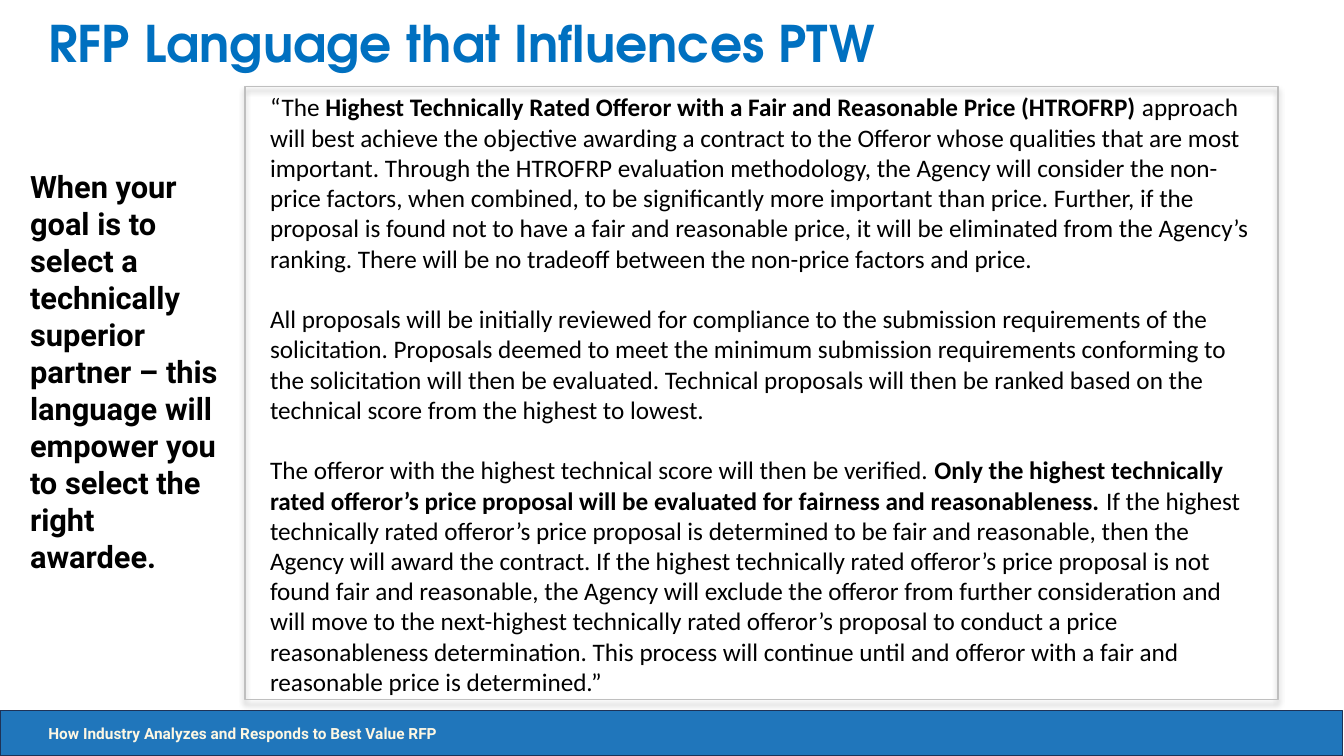
import pptx
import pptx.dml.color
import pptx.enum.shapes
import pptx.enum.text
import pptx.oxml
import pptx.oxml.ns
import pptx.util

Pt = pptx.util.Pt

TITLE = "RFP Language that Influences PTW"
GOAL = ("When your goal is to select a technically superior partner – this language "
        "will empower you to select the right awardee.")
FOOTER = "How Industry Analyzes and Responds to Best Value RFP"
QUOTE = [
    [("“The ", False),
     ("Highest Technically Rated Offeror with a Fair and Reasonable Price (HTROFRP) ", True),
     ("approach will best achieve the objective awarding a contract to the Offeror whose "
      "qualities that are most important. Through the HTROFRP evaluation methodology, the "
      "Agency will consider the non-price factors, when combined, to be significantly more "
      "important than price. Further, if the proposal is found not to have a fair and "
      "reasonable price, it will be eliminated from the Agency’s ranking. There will be no "
      "tradeoff between the non-price factors and price.", False)],
    [("All proposals will be initially reviewed for compliance to the submission requirements "
      "of the solicitation. Proposals deemed to meet the minimum submission requirements "
      "conforming to the solicitation will then be evaluated. Technical proposals will then be "
      "ranked based on the technical score from the highest to lowest.", False)],
    [("The offeror with the highest technical score will then be verified. ", False),
     ("Only the highest technically rated offeror’s price proposal will be evaluated for "
      "fairness and reasonableness. ", True),
     ("If the highest technically rated offeror’s price proposal is determined to be fair and "
      "reasonable, then the Agency will award the contract. If the highest technically rated "
      "offeror’s price proposal is not found fair and reasonable, the Agency will exclude the "
      "offeror from further consideration and will move to the next-highest technically rated "
      "offeror’s proposal to conduct a price reasonableness determination. This process will "
      "continue until and offeror with a fair and reasonable price is determined.”", False)],
]


def rgb(value):
    """Turn a hex string into a colour."""
    return pptx.dml.color.RGBColor.from_string(value)


def add_run(p, text, font="Calibri", size=18, color="000000", bold=False):
    """Append formatted text to a paragraph."""
    r = p.add_run()
    r.text = text
    r.font.name = font
    r.font.size = Pt(size)
    r.font.bold = bold
    r.font.color.rgb = rgb(color)


def place(sp, left, top, width, height):
    """Position a shape, with lengths in points."""
    sp.left, sp.top, sp.width, sp.height = Pt(left), Pt(top), Pt(width), Pt(height)


def set_title(slide, text, box, **fmt):
    """Move and format the title placeholder."""
    sp = slide.shapes.title
    place(sp, *box)
    tf = sp.text_frame
    tf.auto_size = pptx.enum.text.MSO_AUTO_SIZE.NONE
    tf.vertical_anchor = pptx.enum.text.MSO_ANCHOR.TOP
    tf.paragraphs[0].alignment = pptx.enum.text.PP_ALIGN.LEFT
    add_run(tf.paragraphs[0], text, **fmt)


def add_text(slide, paragraphs, box, gap=0, **fmt):
    """Add a wrapped text box from paragraphs of (text, bold) runs."""
    tf = slide.shapes.add_textbox(*map(Pt, box)).text_frame
    tf.word_wrap = True
    for i, runs in enumerate(paragraphs):
        p = tf.add_paragraph() if i else tf.paragraphs[0]
        p.space_before = Pt(gap if i else 0)
        for text, bold in runs:
            add_run(p, text, bold=bold, **fmt)


def add_rect(slide, box, line, fill=None):
    """Add a rectangle with a one-point outline and an optional fill."""
    sp = slide.shapes.add_shape(pptx.enum.shapes.MSO_SHAPE.RECTANGLE, *map(Pt, box))
    sp.shadow.inherit = False
    sp.line.color.rgb = rgb(line)
    sp.line.width = Pt(1)
    if fill:
        sp.fill.solid()
        sp.fill.fore_color.rgb = rgb(fill)
    else:
        sp.fill.background()
    return sp


def add_shadow(sp, blur, distance, opacity):
    """Give a shape a soft black shadow that falls straight down."""
    effects = sp._element.spPr.find(pptx.oxml.ns.qn("a:effectLst"))
    effects.append(pptx.oxml.parse_xml(
        f'<a:outerShdw {pptx.oxml.ns.nsdecls("a")} blurRad="{Pt(blur)}" '
        f'dist="{Pt(distance)}" dir="5400000" rotWithShape="0">'
        f'<a:srgbClr val="000000"><a:alpha val="{opacity * 1000}"/></a:srgbClr>'
        '</a:outerShdw>'))


def main():
    """Build the slide and save it."""
    prs = pptx.Presentation()
    prs.slide_width, prs.slide_height = Pt(960), Pt(540)
    slide = prs.slides.add_slide(prs.slide_layouts[5])
    set_title(slide, TITLE, (27.4, 5, 672, 51), font="TeX Gyre Adventor", size=36,
              color="0070C0", bold=True)
    add_text(slide, [[(GOAL, True)]], (14.4, 116.6, 154, 327), font="Roboto", size=22)
    add_text(slide, QUOTE, (185.8, 62, 718.6, 443.5), gap=21.6)
    frame = add_rect(slide, (175, 62, 738, 437.8), line="BFBFBF")
    add_shadow(frame, blur=4, distance=3, opacity=40)
    add_rect(slide, (0, 507.6, 959, 32.4), line="1E3256", fill="2076BB")
    add_text(slide, [[(FOOTER, True)]], (27.4, 513.4, 332, 21), font="Roboto", size=11,
             color="FDF7E3")
    prs.save("out.pptx")


if __name__ == "__main__":
    main()
